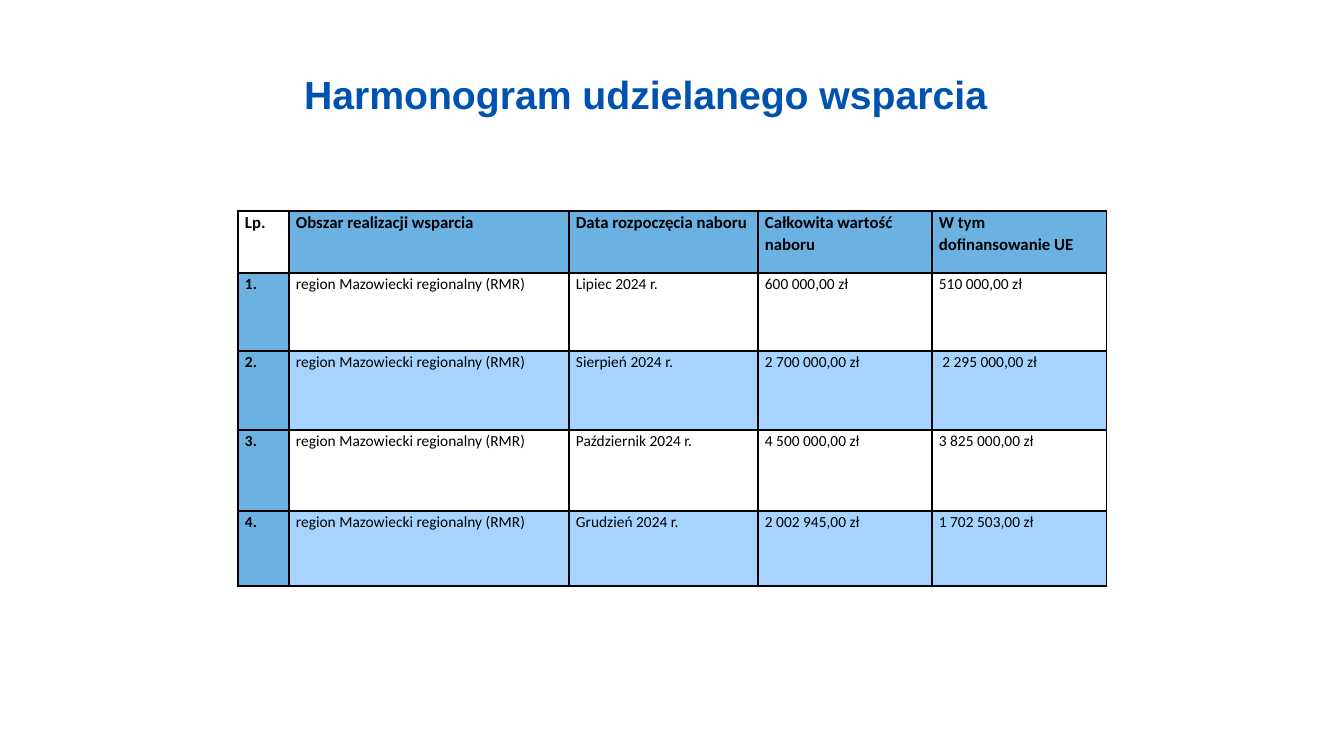
from lxml.etree import SubElement
from pptx import Presentation
from pptx.dml.color import RGBColor
from pptx.enum.text import MSO_ANCHOR as Anchor, PP_ALIGN as Align
from pptx.oxml.ns import qn
from pptx.util import Pt

PX = 914400 / 100.8  # EMU in one px
TITLE_BLUE = RGBColor(0x00, 0x52, 0xB0)
HEAD_BLUE = RGBColor(0x6B, 0xB1, 0xE2)
BAND_BLUE = RGBColor(0xA6, 0xD4, 0xFF)
WHITE = RGBColor(0xFF, 0xFF, 0xFF)
BLACK = RGBColor(0x00, 0x00, 0x00)

REGION = "region Mazowiecki regionalny (RMR)"
HEADER = ["Lp.", "Obszar realizacji wsparcia", "Data rozpoczęcia naboru",
          "Całkowita wartość naboru", "W tym dofinansowanie UE"]
CALLS = [
    ("Lipiec 2024 r.", "600 000,00 zł", "510 000,00 zł"),
    ("Sierpień 2024 r.", "2 700 000,00 zł", " 2 295 000,00 zł"),
    ("Październik 2024 r.", "4 500 000,00 zł", "3 825 000,00 zł"),
    ("Grudzień 2024 r.", "2 002 945,00 zł", "1 702 503,00 zł"),
]
COL_WIDTHS = [51, 280, 189, 174, 175]
ROW_HEIGHTS = [62, 78, 79, 81, 75]


def px(n):
    return round(n * PX)


def style_run(run, font, size, color, bold):
    f = run.font
    f.name, f.size, f.bold = font, Pt(size), bold
    f.color.rgb = color


def add_borders(cell):
    tc_pr = cell._tc.get_or_add_tcPr()
    for i, side in enumerate(("a:lnL", "a:lnR", "a:lnT", "a:lnB")):
        ln = tc_pr.makeelement(qn(side), {"w": str(Pt(1))})
        fill = SubElement(ln, qn("a:solidFill"))
        SubElement(fill, qn("a:srgbClr"), val=str(BLACK))
        tc_pr.insert(i, ln)  # borders precede the fill


def cell_fill(row, col):
    if row == 0 or col == 0:
        return WHITE if row == col else HEAD_BLUE
    return WHITE if row % 2 else BAND_BLUE


def add_title(s, x, y, w, h):
    title = s.shapes.title
    title.left, title.top, title.width, title.height = map(px, (x, y, w, h))
    tf = title.text_frame
    tf.text = "Harmonogram udzielanego wsparcia"
    tf.word_wrap = True
    tf.vertical_anchor = Anchor.TOP
    p = tf.paragraphs[0]
    p.alignment = Align.LEFT
    style_run(p.runs[0], "Arial", 28, TITLE_BLUE, True)


def add_schedule(s, x, y):
    rows = [HEADER] + [[f"{n}.", REGION, *call] for n, call in enumerate(CALLS, 1)]
    table = s.shapes.add_table(len(rows), len(HEADER), px(x), px(y),
                               px(sum(COL_WIDTHS)), px(sum(ROW_HEIGHTS))).table
    table.first_row = table.horz_banding = False
    for column, width in zip(table.columns, COL_WIDTHS):
        column.width = px(width)
    for row, height in zip(table.rows, ROW_HEIGHTS):
        row.height = px(height)

    for r, texts in enumerate(rows):
        for c, text in enumerate(texts):
            cell = table.cell(r, c)
            cell.margin_left = cell.margin_right = px(7)
            cell.margin_top = cell.margin_bottom = 0
            cell.fill.solid()
            cell.fill.fore_color.rgb = cell_fill(r, c)
            add_borders(cell)
            p = cell.text_frame.paragraphs[0]
            p.text = text
            p.line_spacing = 1.07
            style_run(p.runs[0], "Calibri", 11 if r else 12, BLACK, r == 0 or c == 0)


def main():
    prs = Presentation()
    prs.slide_width, prs.slide_height = px(1344), px(756)
    s = prs.slides.add_slide(prs.slide_layouts[5])  # title only
    add_title(s, 294, 65, 712, 57)
    add_schedule(s, 238, 211)
    prs.save("out.pptx")


if __name__ == "__main__":
    main()
